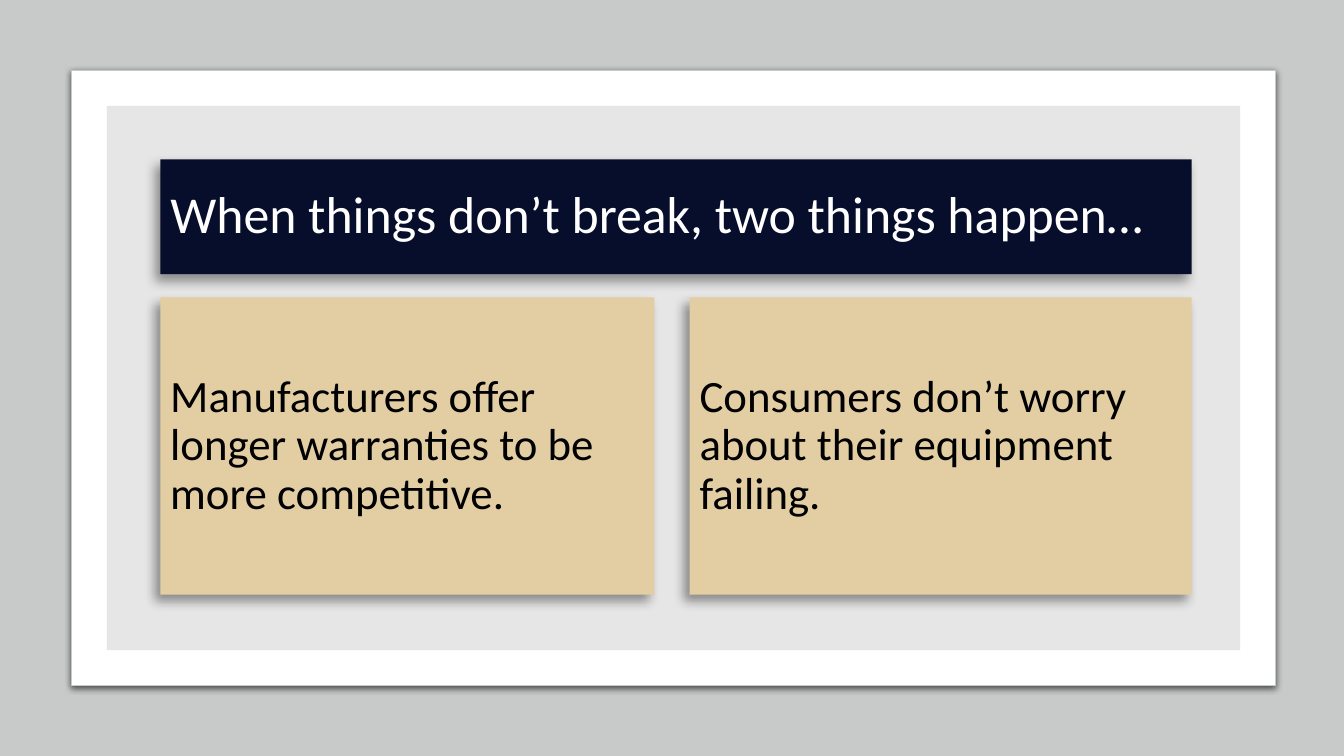
import pptx
import pptx.dml.color
import pptx.enum.shapes
import pptx.enum.text
import pptx.oxml
import pptx.oxml.ns
import pptx.util
from pptx.util import Inches, Pt

TITLE = "When things don’t break, two things happen…"
OUTCOMES = [
    # text, left, width
    ("Manufacturers offer longer warranties to be more competitive.", 1.59, 4.9),
    ("Consumers don’t worry about their equipment failing.", 6.84, 4.98),
]
SLIDE_WIDTH, SLIDE_HEIGHT = 13.33, 7.5
GREY, WHITE, PALE, NAVY, SAND, BLACK = (
    "C8CACA", "FFFFFF", "E7E6E6", "070E2B", "E3CEA3", "000000")
FRAME_BOX = (0.71, 0.7, 11.94, 6.1)
BORDER = 0.35
TITLE_BOX = (1.59, 1.58, 10.23, 1.14)
OUTCOME_TOP, OUTCOME_HEIGHT = 2.95, 2.95
# opacity percent, blur points, distance points, direction degrees
FRAME_SHADOW = (63, 4.5, 1.5, 90)
CARD_SHADOW = (40, 8, 6, 135)


def color(value):
    return pptx.dml.color.RGBColor.from_string(value)


def place(shape, box):
    for name, value in zip(("left", "top", "width", "height"), box):
        setattr(shape, name, Inches(value))


def style(shape, fill, line=None, shadow=None):
    shape.fill.solid()
    shape.fill.fore_color.rgb = color(fill)
    if line:
        shape.line.color.rgb = color(line)
        shape.line.width = Pt(0.75)
    else:
        shape.line.fill.background()
    shape.shadow.inherit = False
    if shadow:
        opacity, blur, distance, direction = shadow
        effects = shape.element.spPr.find(pptx.oxml.ns.qn("a:effectLst"))
        effects.append(pptx.oxml.parse_xml(
            f'<a:outerShdw {pptx.oxml.ns.nsdecls("a")} blurRad="{Pt(blur)}" '
            f'dist="{Pt(distance)}" dir="{direction * 60000}" algn="ctr" rotWithShape="0">'
            f'<a:srgbClr val="{BLACK}"><a:alpha val="{opacity * 1000}"/></a:srgbClr>'
            '</a:outerShdw>'))


def add_rectangle(slide, box, fill, line=None, shadow=None):
    shape = slide.shapes.add_shape(
        pptx.enum.shapes.MSO_SHAPE.RECTANGLE, *map(Inches, box))
    style(shape, fill, line, shadow)
    return shape


def write(shape, text, size, text_color):
    frame = shape.text_frame
    frame.text = text
    frame_format = {
        "word_wrap": True,
        "auto_size": pptx.enum.text.MSO_AUTO_SIZE.NONE,
        "vertical_anchor": pptx.enum.text.MSO_ANCHOR.MIDDLE,
    }
    for name, value in frame_format.items():
        setattr(frame, name, value)
    paragraph = frame.paragraphs[0]
    paragraph.alignment = pptx.enum.text.PP_ALIGN.LEFT
    paragraph.line_spacing = 0.9
    font = paragraph.runs[0].font
    for name, value in {"name": "Calibri", "size": Pt(size)}.items():
        setattr(font, name, value)
    font.color.rgb = color(text_color)


def main():
    presentation = pptx.Presentation()
    presentation.slide_width = Inches(SLIDE_WIDTH)
    presentation.slide_height = Inches(SLIDE_HEIGHT)
    slide = presentation.slides.add_slide(presentation.slide_layouts[5])

    left, top, width, height = FRAME_BOX
    inner_box = (left + BORDER, top + BORDER, width - 2 * BORDER, height - 2 * BORDER)
    add_rectangle(slide, (0, 0, SLIDE_WIDTH, SLIDE_HEIGHT), GREY)
    add_rectangle(slide, FRAME_BOX, WHITE, GREY, FRAME_SHADOW)
    add_rectangle(slide, inner_box, PALE)

    title = slide.shapes.title
    title.element.getparent().append(title.element)  # bring in front of the panels
    place(title, TITLE_BOX)
    style(title, NAVY, shadow=CARD_SHADOW)
    write(title, TITLE, 37, WHITE)

    for text, card_left, card_width in OUTCOMES:
        box = (card_left, OUTCOME_TOP, card_width, OUTCOME_HEIGHT)
        card = add_rectangle(slide, box, SAND, shadow=CARD_SHADOW)
        write(card, text, 32, BLACK)

    presentation.save("out.pptx")


if __name__ == "__main__":
    main()
